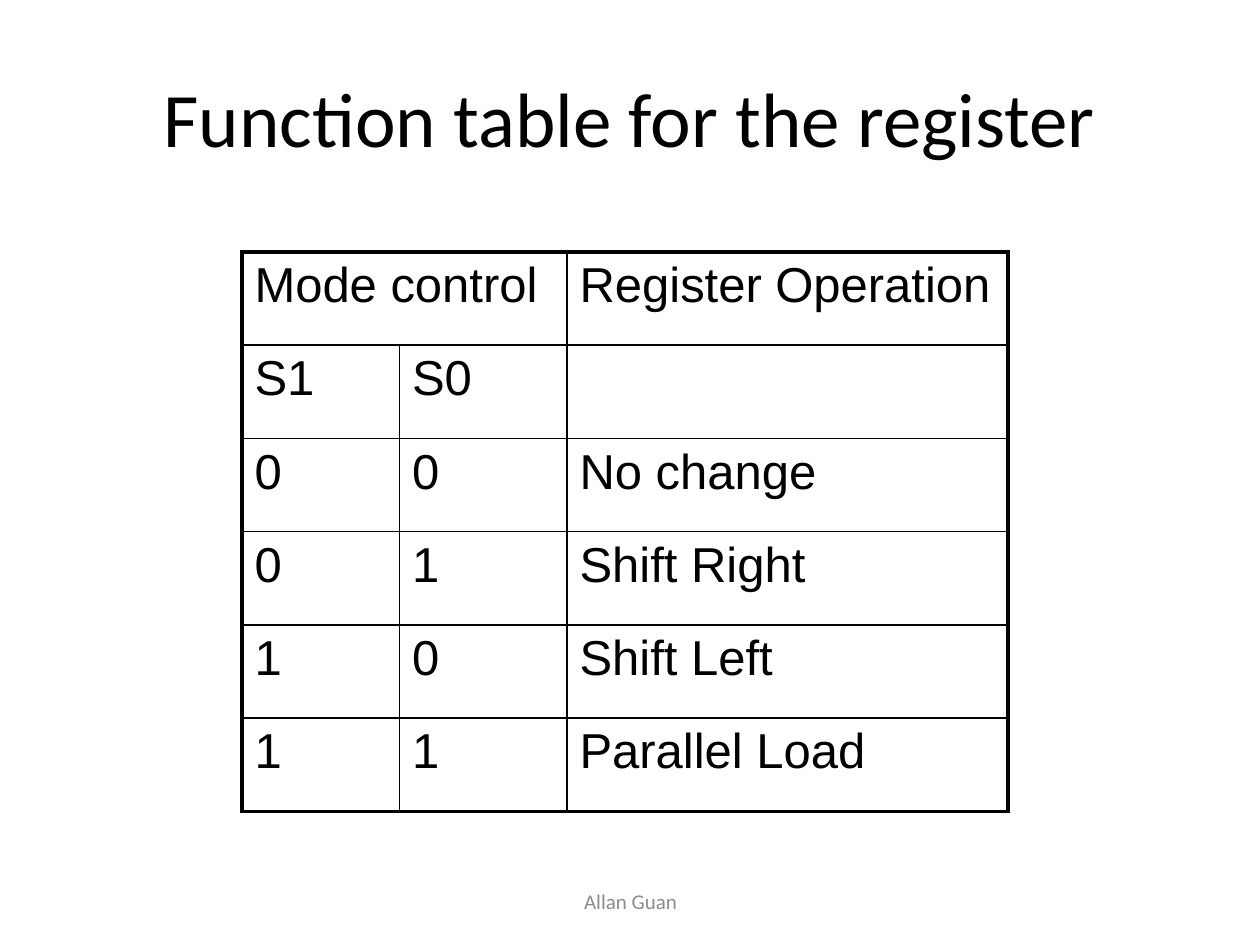
"""Build a slide with the function table of a shift register."""
import dataclasses

import lxml.etree
import pptx
import pptx.dml.color
import pptx.enum.text
import pptx.oxml.ns
import pptx.slide
import pptx.table
import pptx.text.text
import pptx.util

Inches = pptx.util.Inches
Pt = pptx.util.Pt

COLORS = {"ink": "000000", "footer": "8C8C8C"}
ROWS = [
    ["Mode control", "", "Register Operation"],
    ["S1", "S0", ""],
    ["0", "0", "No change"],
    ["0", "1", "Shift Right"],
    ["1", "0", "Shift Left"],
    ["1", "1", "Parallel Load"],
]
COLUMN_WIDTHS = [1.25, 1.33, 3.5]
ROW_HEIGHT = 0.74
OUTER_LINE = 2.25
INNER_LINE = 1


@dataclasses.dataclass
class Label:
    text: str
    left: float
    top: float
    width: float
    height: float
    size: float
    color: str


LABELS = [
    Label("Function table for the register", 0.5, 0.3, 9, 1.25, 44, "ink"),
    Label("Allan Guan", 3.42, 6.95, 3.17, 0.4, 12, "footer"),
]


def format_spans(para: pptx.text.text._Paragraph, font: str, size: float, color: str) -> None:
    for span in para.runs:
        span.font.name = font
        span.font.size = Pt(size)
        span.font.color.rgb = pptx.dml.color.RGBColor.from_string(COLORS[color])


def add_label(page: pptx.slide.Slide, label: Label) -> None:
    box = page.shapes.add_textbox(
        Inches(label.left), Inches(label.top), Inches(label.width), Inches(label.height)
    )
    frame = box.text_frame
    frame.word_wrap = True
    frame.vertical_anchor = pptx.enum.text.MSO_ANCHOR.MIDDLE
    frame.text = label.text
    para = frame.paragraphs[0]
    para.alignment = pptx.enum.text.PP_ALIGN.CENTER
    format_spans(para, "Calibri", label.size, label.color)


def add_border(cell: pptx.table._Cell, side: str, width: float) -> None:
    qn = pptx.oxml.ns.qn
    properties = cell._tc.get_or_add_tcPr()
    line = lxml.etree.SubElement(properties, qn(f"a:ln{side}"), w=str(Pt(width)))
    fill = lxml.etree.SubElement(line, qn("a:solidFill"))
    lxml.etree.SubElement(fill, qn("a:srgbClr"), val=COLORS["ink"])


def add_function_table(page: pptx.slide.Slide) -> None:
    row_count, column_count = len(ROWS), len(COLUMN_WIDTHS)
    table = page.shapes.add_table(
        row_count, column_count, Inches(1.92), Inches(2),
        Inches(sum(COLUMN_WIDTHS)), Inches(ROW_HEIGHT * row_count),
    ).table
    table.first_row = False
    table.horz_banding = False
    for column, width in zip(table.columns, COLUMN_WIDTHS):
        column.width = Inches(width)
    for row_index, texts in enumerate(ROWS):
        table.rows[row_index].height = Inches(ROW_HEIGHT)
        for column_index, text in enumerate(texts):
            cell = table.cell(row_index, column_index)
            outer_sides = {
                "L": column_index == 0,
                "R": column_index == column_count - 1,
                "T": row_index == 0,
                "B": row_index == row_count - 1,
            }
            for side, is_outer in outer_sides.items():
                add_border(cell, side, OUTER_LINE if is_outer else INNER_LINE)
            cell.fill.background()
            if text:
                cell.text_frame.text = text
                format_spans(cell.text_frame.paragraphs[0], "Arial", 28, "ink")
    table.cell(0, 0).merge(table.cell(0, 1))


def main() -> None:
    deck = pptx.Presentation()
    deck.slide_width = Inches(10)
    deck.slide_height = Inches(7.5)
    page = deck.slides.add_slide(deck.slide_layouts[6])
    for label in LABELS:
        add_label(page, label)
    add_function_table(page)
    deck.save("out.pptx")


if __name__ == "__main__":
    main()
